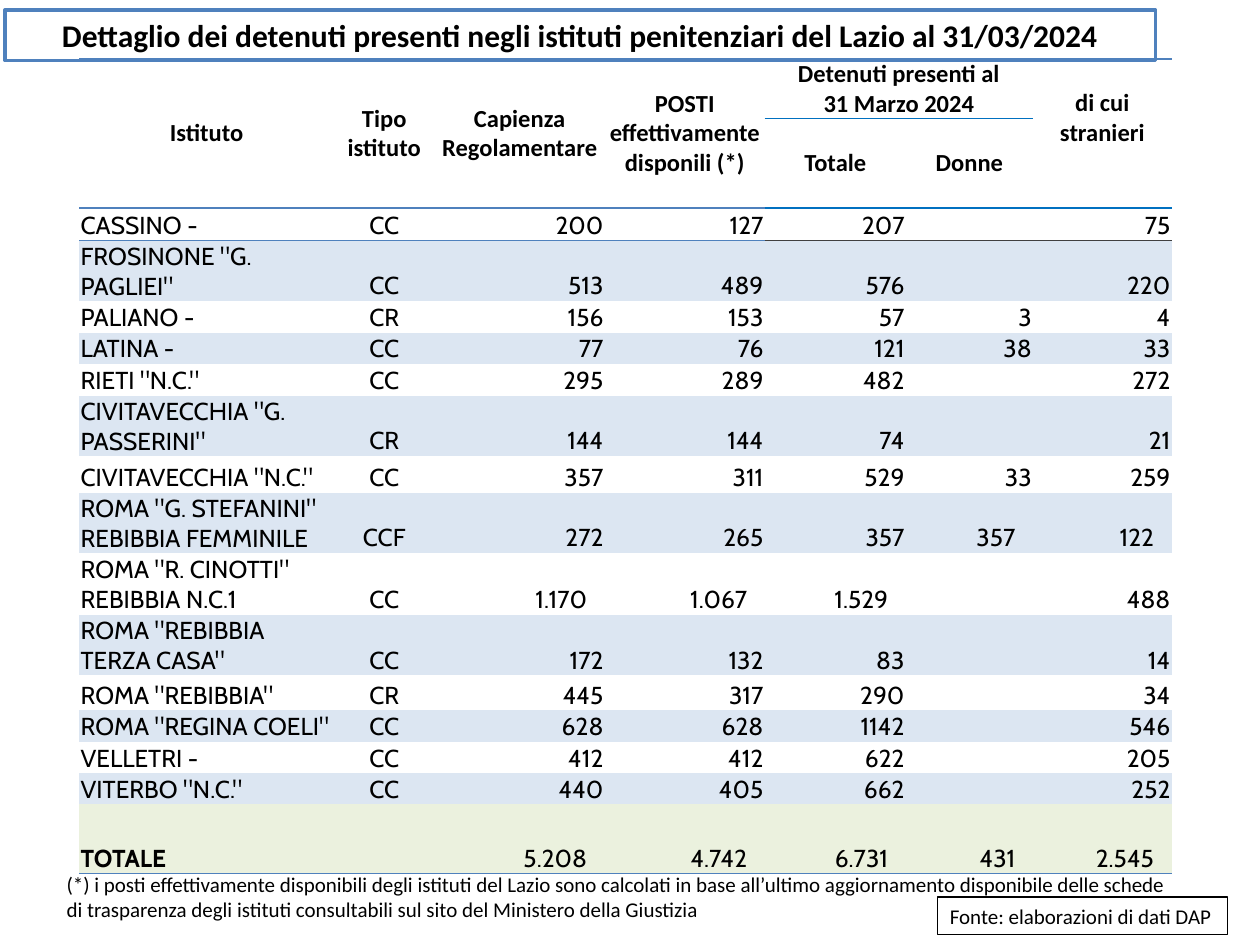
from lxml.etree import SubElement
from pptx import Presentation
from pptx.dml.color import RGBColor
from pptx.enum.shapes import MSO_SHAPE as SHAPE
from pptx.enum.text import MSO_ANCHOR as ANCHOR, MSO_AUTO_SIZE as AUTO, PP_ALIGN as ALIGN
from pptx.oxml.ns import qn
from pptx.util import Inches, Pt

BLACK = RGBColor(0x00, 0x00, 0x00)
WHITE = RGBColor(0xFF, 0xFF, 0xFF)
BLUE = RGBColor(0x4F, 0x81, 0xBD)
DEEP_BLUE = RGBColor(0x00, 0x70, 0xC0)
BAND = RGBColor(0xDC, 0xE6, 0xF2)
GREEN = RGBColor(0xEB, 0xF1, 0xDE)
GREY = RGBColor(0x40, 0x40, 0x40)

TITLE = "Dettaglio dei detenuti presenti negli istituti penitenziari del Lazio al 31/03/2024"
NOTE = ("(*) i posti effettivamente disponibili degli istituti del Lazio sono calcolati in base "
        "all’ultimo aggiornamento disponibile delle schede di trasparenza degli istituti "
        "consultabili sul sito del Ministero della Giustizia")
SOURCE = "Fonte: elaborazioni di dati DAP"

HEADERS = [
    ["Istituto", "Tipo istituto", "Capienza\nRegolamentare",
     "POSTI\veffettivamente disponili (*)", "Detenuti presenti al\n31 Marzo 2024", "",
     "di cui\nstranieri"],
    ["", "", "", "", "Totale", "Donne", ""],
]
PRISONS = [
    ["CASSINO -", "CC", "200", "127", "207", "", "75"],
    ['FROSINONE "G. PAGLIEI"', "CC", "513", "489", "576", "", "220"],
    ["PALIANO -", "CR", "156", "153", "57", "3", "4"],
    ["LATINA -", "CC", "77", "76", "121", "38", "33"],
    ['RIETI "N.C."', "CC", "295", "289", "482", "", "272"],
    ['CIVITAVECCHIA "G. PASSERINI"', "CR", "144", "144", "74", "", "21"],
    ['CIVITAVECCHIA "N.C."', "CC", "357", "311", "529", "33", "259"],
    ['ROMA "G. STEFANINI" REBIBBIA FEMMINILE', "CCF", "272", "265", "357", "357", "122"],
    ['ROMA "R. CINOTTI" REBIBBIA N.C.1', "CC", "1.170", "1.067", "1.529", "", "488"],
    ['ROMA "REBIBBIA TERZA CASA"', "CC", "172", "132", "83", "", "14"],
    ['ROMA "REBIBBIA"', "CR", "445", "317", "290", "", "34"],
    ['ROMA "REGINA COELI"', "CC", "628", "628", "1142", "", "546"],
    ["VELLETRI -", "CC", "412", "412", "622", "", "205"],
    ['VITERBO "N.C."', "CC", "440", "405", "662", "", "252"],
]
TOTAL = ["TOTALE", "", "5.208", "4.742", "6.731", "431", "2.545"]
ROWS = HEADERS + PRISONS + [TOTAL]
LAST = len(ROWS) - 1
INDENTED = {9: (5, 6), 10: (2, 3, 4), LAST: (2, 3, 4, 5, 6)}

COL_WIDTHS = [2.02, 0.8, 1.35, 1.27, 1.12, 1.01, 1.1]
ROW_HEIGHTS = [0.47, 0.71, 0.26, 0.48, 0.25, 0.25, 0.25, 0.48, 0.29, 0.48, 0.49, 0.48,
               0.28, 0.25, 0.25, 0.24, 0.55]
NO_STYLE = "{2D5ABB26-0587-4C30-8999-92F81FD0307C}"


def write(tf, text, size=12, font="Calibri", bold=False, align=ALIGN.LEFT):
    for i, line in enumerate(text.split("\n")):
        p = tf.paragraphs[0] if i == 0 else tf.add_paragraph()
        p.text = line
        p.alignment = align
        for r in p.runs:
            r.font.size, r.font.name, r.font.bold = Pt(size), font, bold
            r.font.color.rgb = BLACK
        if not line:
            SubElement(p._p, qn("a:endParaRPr"), sz=str(size * 100))


def place(sp, left, top, width, height):
    sp.left, sp.top, sp.width, sp.height = map(Inches, (left, top, width, height))


def outline(sp, color, width):
    sp.fill.solid()
    sp.fill.fore_color.rgb = WHITE
    sp.line.color.rgb = color
    sp.line.width = Pt(width)


def border(cell, side, color, width=1):
    ln = SubElement(cell._tc.get_or_add_tcPr(), qn(f"a:ln{side}"), w=str(Pt(width)))
    SubElement(SubElement(ln, qn("a:solidFill")), qn("a:srgbClr"), val=str(color))


def add_borders(cell, row, col):
    split = DEEP_BLUE if col >= 4 else BLUE
    if row == 0:
        border(cell, "T", BLUE)
        if col in (4, 5):
            border(cell, "B", DEEP_BLUE)
    elif row == 1:
        if col in (4, 5):
            border(cell, "T", DEEP_BLUE)
        border(cell, "B", split)
    elif row == 2:
        border(cell, "T", split)
        if col >= 4:
            border(cell, "B", GREY, 0.5)
    elif row == LAST:
        border(cell, "B", BLUE)


def fill_cell(cell, row, col, text):
    header = row < len(HEADERS)
    margin = 0 if header else 0.01
    cell.margin_left = cell.margin_top = Inches(margin)
    cell.margin_right = Inches(0.14 if col in INDENTED.get(row, ()) else margin)
    cell.margin_bottom = Inches(0.24 if header and col == 6 else 0)
    cell.vertical_anchor = ANCHOR.MIDDLE if header else ANCHOR.BOTTOM
    add_borders(cell, row, col)
    if row == LAST or (not header and row % 2):
        cell.fill.solid()
        cell.fill.fore_color.rgb = GREEN if row == LAST else BAND
    else:
        cell.fill.background()
    align = ALIGN.CENTER if header or col == 1 else ALIGN.RIGHT if col else ALIGN.LEFT
    write(cell.text_frame, text, size=14, font="Calibri" if header else "Cabin",
          bold=header or text == "TOTALE", align=align)


def add_prison_table(s):
    frame = s.shapes.add_table(len(ROWS), len(COL_WIDTHS), Inches(0.63), Inches(0.47),
                               Inches(sum(COL_WIDTHS)), Inches(sum(ROW_HEIGHTS)))
    table = frame.table
    table.first_row = table.horz_banding = False
    table._tbl.tblPr.find(qn("a:tableStyleId")).text = NO_STYLE
    for column, width in zip(table.columns, COL_WIDTHS):
        column.width = Inches(width)
    for row, height in zip(table.rows, ROW_HEIGHTS):
        row.height = Inches(height)
    for i, values in enumerate(ROWS):
        for j, text in enumerate(values):
            fill_cell(table.cell(i, j), i, j, text)
    for j in (0, 1, 2, 3, 6):
        table.cell(0, j).merge(table.cell(1, j))
    table.cell(0, 4).merge(table.cell(0, 5))


def main():
    prs = Presentation()
    prs.slide_width, prs.slide_height = Inches(10), Inches(7.5)
    s = prs.slides.add_slide(prs.slide_layouts[5])

    title = s.shapes.title
    place(title, 0.04, 0.08, 9.13, 0.4)
    outline(title, BLUE, 2)
    title.text_frame.auto_size = AUTO.NONE
    title.text_frame.vertical_anchor = ANCHOR.MIDDLE
    write(title.text_frame, TITLE, size=18, bold=True, align=ALIGN.CENTER)

    note = s.shapes.add_textbox(Inches(0.43), Inches(6.87), Inches(9.06), Inches(0.5))
    note.text_frame.word_wrap = True
    write(note.text_frame, NOTE)

    source = s.shapes.add_shape(SHAPE.RECTANGLE, Inches(7.44), Inches(7.12),
                                Inches(2.3), Inches(0.3))
    source.shadow.inherit = False
    outline(source, BLACK, 0.75)
    source.text_frame.word_wrap = False
    write(source.text_frame, SOURCE)

    add_prison_table(s)
    prs.save("out.pptx")


if __name__ == "__main__":
    main()
